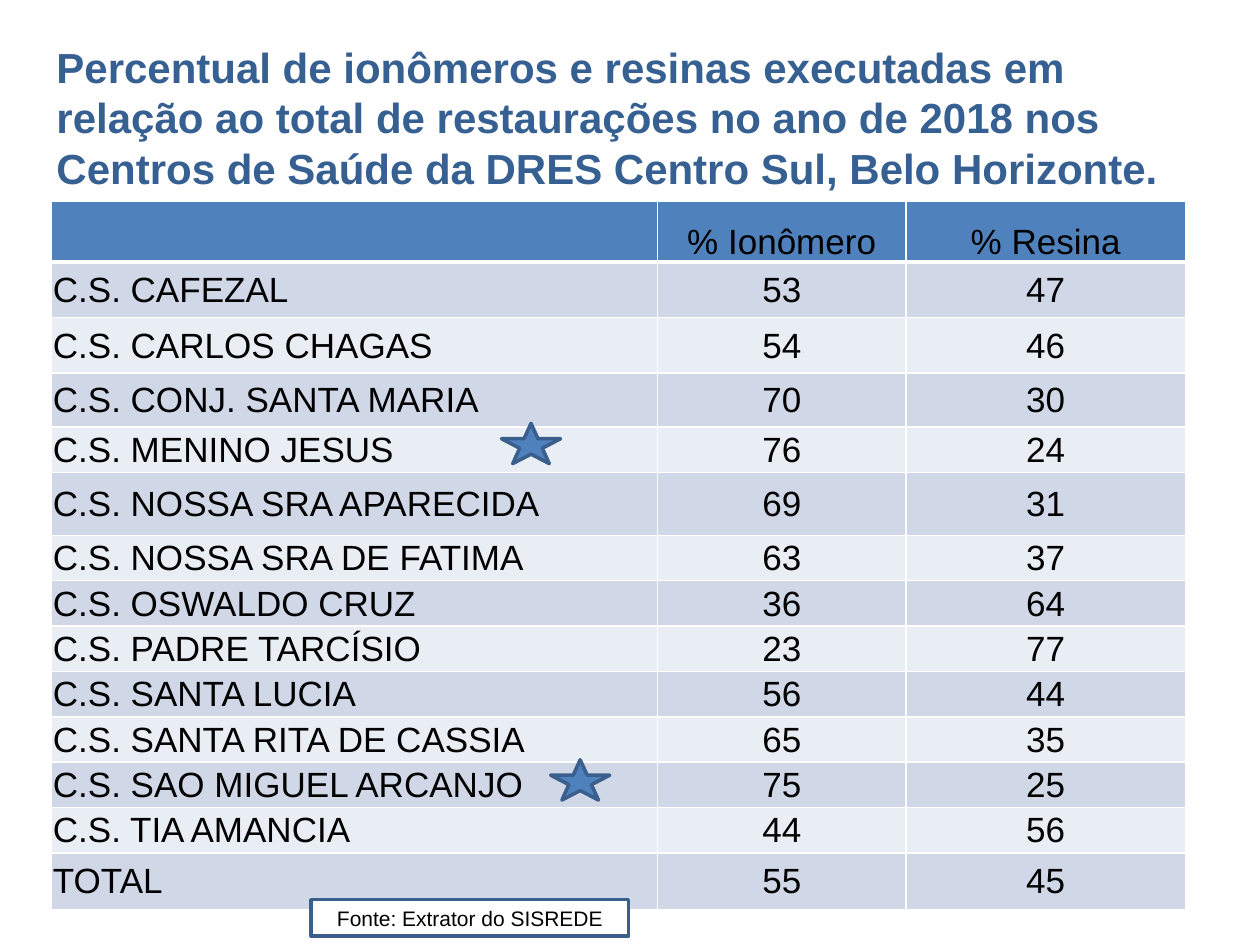
from typing import NamedTuple

from lxml import etree
from pptx import Presentation
from pptx.dml.color import RGBColor
from pptx.enum.shapes import MSO_SHAPE
from pptx.enum.text import MSO_ANCHOR, PP_ALIGN
from pptx.oxml.ns import qn
from pptx.util import Inches, Pt

STAR = MSO_SHAPE.STAR_5_POINT
RECT = MSO_SHAPE.RECTANGLE
LEFT, CENTER = PP_ALIGN.LEFT, PP_ALIGN.CENTER
MIDDLE, BOTTOM = MSO_ANCHOR.MIDDLE, MSO_ANCHOR.BOTTOM

FONT = "Arial"
BLUE, EDGE, NAVY = "4F81BD", "3A5F8C", "376092"
DARK, LIGHT = "D0D8E8", "E9EDF4"
WHITE, BLACK = "FFFFFF", "000000"


class Row(NamedTuple):
    name: str
    ion: str
    resin: str
    height: float = 0.36


class Star(NamedTuple):
    left: float
    top: float


COLS = (4.81, 1.97, 2.22)
ROWS = (
    Row("", "% Ionômero", "% Resina", 0.48),
    Row("C.S. CAFEZAL", "53", "47", 0.44),
    Row("C.S. CARLOS CHAGAS", "54", "46", 0.44),
    Row("C.S. CONJ. SANTA MARIA", "70", "30", 0.43),
    Row("C.S. MENINO JESUS", "76", "24"),
    Row("C.S. NOSSA SRA APARECIDA", "69", "31", 0.5),
    Row("C.S. NOSSA SRA DE FATIMA", "63", "37"),
    Row("C.S. OSWALDO CRUZ", "36", "64"),
    Row("C.S. PADRE TARCÍSIO", "23", "77"),
    Row("C.S. SANTA LUCIA", "56", "44"),
    Row("C.S. SANTA RITA DE CASSIA", "65", "35"),
    Row("C.S. SAO MIGUEL ARCANJO", "75", "25"),
    Row("C.S. TIA AMANCIA", "44", "56"),
    Row("TOTAL", "55", "45", 0.45),
)
STARS = (Star(3.98, 3.36), Star(4.37, 6.03))


def color(code: str) -> RGBColor:
    return RGBColor.from_string(code)


def write(frame, text: str, size: float, code: str, align, bold=False) -> None:
    """Put one styled paragraph into a text frame."""
    frame.text = text
    para = frame.paragraphs[0]
    para.alignment = align
    font = para.font
    font.name, font.size, font.bold = FONT, Pt(size), bold
    font.color.rgb = color(code)


def edge(cell, side: str, width: float) -> None:
    """Draw a white border on one side of a cell."""
    line = etree.SubElement(cell._tc.get_or_add_tcPr(), qn(f"a:ln{side}"))
    line.set("w", str(Pt(width)))
    fill = etree.SubElement(line, qn("a:solidFill"))
    etree.SubElement(fill, qn("a:srgbClr")).set("val", WHITE)


def fill_cell(cell, text: str, row: int, col: int) -> None:
    cell.margin_left = cell.margin_right = cell.margin_top = Inches(0.01)
    cell.margin_bottom = 0
    cell.vertical_anchor = MIDDLE if row else BOTTOM
    for side in "LRTB":
        thick = (row, side) in ((0, "B"), (1, "T"))
        edge(cell, side, 3 if thick else 1)
    cell.fill.solid()
    band = DARK if row % 2 else LIGHT
    cell.fill.fore_color.rgb = color(band if row else BLUE)
    write(cell.text_frame, text, 20, BLACK, CENTER if col else LEFT)


def add_grid(slide) -> None:
    high = sum(row.height for row in ROWS)
    table = slide.shapes.add_table(
        len(ROWS), len(COLS), Inches(0.41), Inches(1.6),
        Inches(sum(COLS)), Inches(high)).table
    table.first_row = table.horz_banding = False
    for col, width in enumerate(COLS):
        table.columns[col].width = Inches(width)
    for r, row in enumerate(ROWS):
        table.rows[r].height = Inches(row.height)
        for c, text in enumerate((row.name, row.ion, row.resin)):
            fill_cell(table.cell(r, c), text, r, c)


def add_title(slide) -> None:
    box = slide.shapes.add_textbox(
        Inches(0.35), Inches(0.28), Inches(9.37), Inches(1.31))
    box.text_frame.word_wrap = True
    write(box.text_frame,
          "Percentual de ionômeros e resinas executadas em relação ao total "
          "de restaurações no ano de 2018 nos Centros de Saúde da DRES "
          "Centro Sul, Belo Horizonte.", 24, NAVY, LEFT, True)


def add_shape(slide, kind, left: float, top: float,
              width: float, height: float, code: str):
    shape = slide.shapes.add_shape(
        kind, Inches(left), Inches(top), Inches(width), Inches(height))
    shape.shadow.inherit = False
    shape.fill.solid()
    shape.fill.fore_color.rgb = color(code)
    shape.line.color.rgb = color(EDGE)
    shape.line.width = Pt(2)
    return shape


def main() -> None:
    deck = Presentation()
    deck.slide_width, deck.slide_height = Inches(10), Inches(7.5)
    slide = deck.slides.add_slide(deck.slide_layouts[6])
    add_grid(slide)
    add_title(slide)
    for star in STARS:
        add_shape(slide, STAR, star.left, star.top, 0.47, 0.32, BLUE)
    note = add_shape(slide, RECT, 2.47, 7.14, 2.52, 0.29, WHITE).text_frame
    note.word_wrap = True
    note.vertical_anchor = MIDDLE
    write(note, "Fonte: Extrator do SISREDE", 12, BLACK, CENTER)
    deck.save("out.pptx")


if __name__ == "__main__":
    main()
